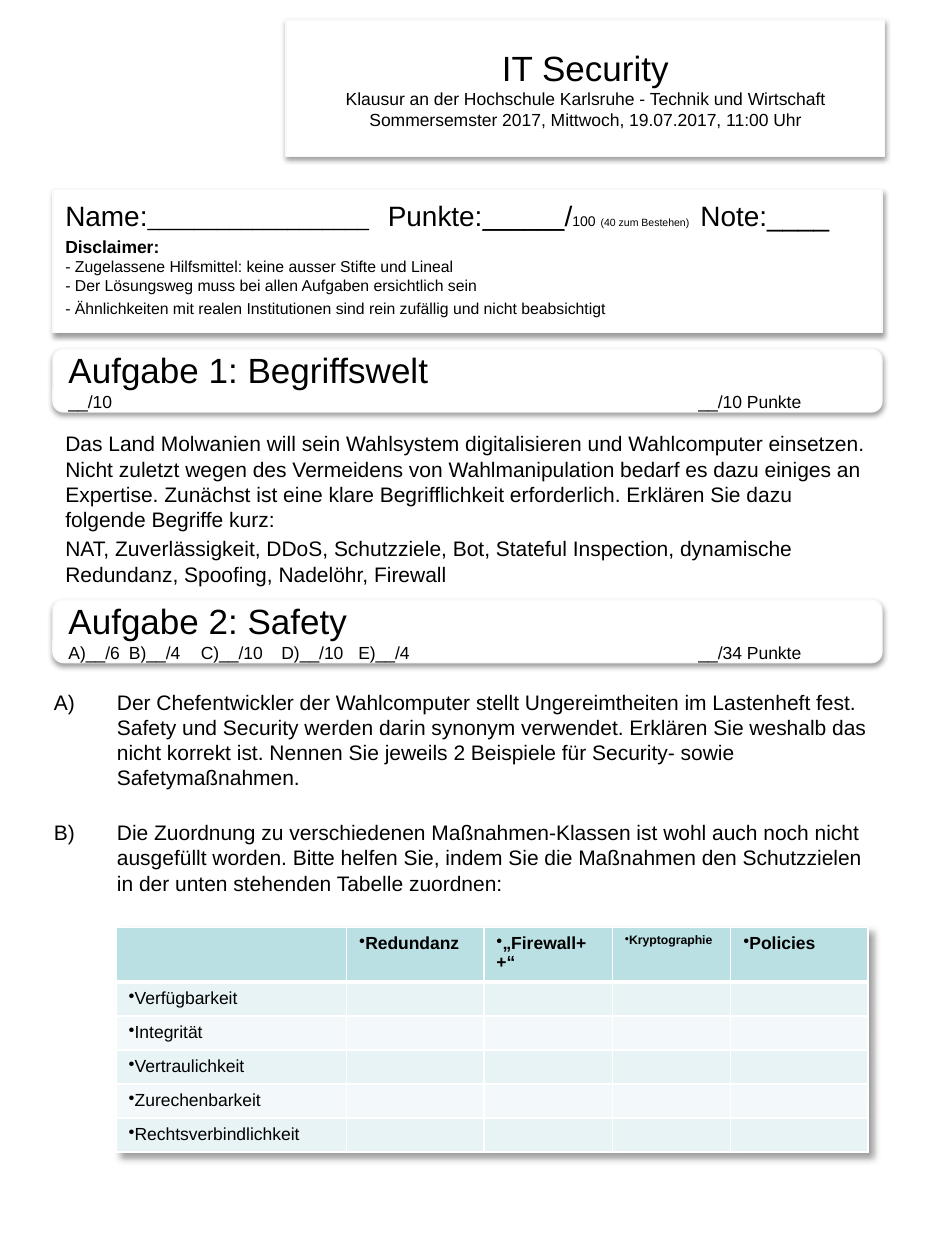
from lxml import etree
from pptx import Presentation
from pptx.dml.color import RGBColor
from pptx.enum.shapes import MSO_SHAPE
from pptx.enum.text import MSO_ANCHOR, PP_ALIGN
from pptx.oxml import parse_xml
from pptx.oxml.ns import nsdecls, qn
from pptx.util import Inches, Pt

BLACK = RGBColor(0x00, 0x00, 0x00)
WHITE = RGBColor(0xFF, 0xFF, 0xFF)
EDGE = RGBColor(0xF9, 0xF9, 0xF9)
HEAD = RGBColor(0xBB, 0xE0, 0xE3)
BAND = RGBColor(0xE7, 0xF3, 0xF4)
PALE = RGBColor(0xF3, 0xF9, 0xFA)
FONT = "Arial"


def shadow_xml(blur, dist, angle):
    return parse_xml(
        f'<a:effectLst {nsdecls("a")}><a:outerShdw blurRad="{Pt(blur)}" dist="{Pt(dist)}" '
        f'dir="{angle * 60000}" algn="tl" rotWithShape="0"><a:srgbClr val="{BLACK}">'
        '<a:alpha val="38000"/></a:srgbClr></a:outerShdw></a:effectLst>')


def add_run(p, text, size, bold=False, underline=False):
    r = p.add_run()
    r.text = text
    r.font.name = FONT
    r.font.size = Pt(size)
    r.font.bold = bold
    r.font.underline = underline
    r.font.color.rgb = BLACK


def add_lines(p, lines, size):
    for i, line in enumerate(lines):
        if i:
            p.add_line_break()
        add_run(p, line, size)


def add_tabs(p, stops):
    tabs = etree.SubElement(p._p.get_or_add_pPr(), qn("a:tabLst"))
    for stop in stops:
        etree.SubElement(tabs, qn("a:tab"), pos=str(Inches(stop)), algn="l")


def add_card(s, x, y, w, h, anchor, rounding):
    sp = s.shapes.add_shape(MSO_SHAPE.ROUNDED_RECTANGLE, Inches(x), Inches(y), Inches(w), Inches(h))
    sp.adjustments[0] = rounding
    sp.fill.solid()
    sp.fill.fore_color.rgb = WHITE
    sp.line.color.rgb = EDGE
    sp.line.width = Pt(0.75)
    sp.shadow.inherit = False
    effects = sp._element.spPr.find(qn("a:effectLst"))
    effects.getparent().replace(effects, shadow_xml(3.1, 1.6, 90))
    tf = sp.text_frame
    tf.word_wrap = True
    tf.vertical_anchor = anchor
    tf.paragraphs[0].alignment = PP_ALIGN.LEFT
    return tf


def add_title(s, x, y, w, h):
    p = add_card(s, x, y, w, h, MSO_ANCHOR.MIDDLE, 0).paragraphs[0]
    p.alignment = PP_ALIGN.CENTER
    add_run(p, "IT Security", 20)
    p.add_line_break()
    add_run(p, "Klausur an der Hochschule Karlsruhe - Technik und Wirtschaft "
               "Sommersemster 2017, Mittwoch, 19.07.2017, 11:00 Uhr", 10)


def add_form(s, x, y, w, h):
    tf = add_card(s, x, y, w, h, MSO_ANCHOR.TOP, 0)
    tf.margin_top = Inches(0.08)
    p = tf.paragraphs[0]
    add_tabs(p, [2.56, 5.04])
    add_run(p, "Name:", 16)
    add_run(p, "_" * 19 + "\t", 12)
    add_run(p, "Punkte:", 16)
    add_run(p, "______", 14, underline=True)
    add_run(p, "/", 16)
    add_run(p, "100", 8)
    add_run(p, " ", 10)
    add_run(p, "(40 zum Bestehen)\t", 6)
    add_run(p, "Note:____", 16)

    p = tf.add_paragraph()
    p.alignment = PP_ALIGN.LEFT
    p.space_before = Pt(2)
    add_run(p, "Disclaimer:", 10, bold=True)
    p.add_line_break()
    add_lines(p, ["- Zugelassene Hilfsmittel: keine ausser Stifte und Lineal",
                  "- Der Lösungsweg muss bei allen Aufgaben ersichtlich sein"], 9)

    p = tf.add_paragraph()
    p.alignment = PP_ALIGN.LEFT
    p.space_before = Pt(2)
    add_run(p, "- Ähnlichkeiten mit realen Institutionen sind rein zufällig und nicht beabsichtigt", 9)


def add_task_header(s, x, y, w, h, title, scores, stops):
    tf = add_card(s, x, y, w, h, MSO_ANCHOR.MIDDLE, 0.17)
    add_run(tf.paragraphs[0], title, 20)
    p = tf.add_paragraph()
    p.alignment = PP_ALIGN.LEFT
    add_tabs(p, stops)
    add_run(p, "\t".join(scores), 10)


def add_body(s, x, y, w, h, texts, gap, lettered=False):
    tf = s.shapes.add_textbox(Inches(x), Inches(y), Inches(w), Inches(h)).text_frame
    tf.word_wrap = True
    tf.margin_top = Inches(0.07)
    for i, text in enumerate(texts):
        p = tf.add_paragraph() if i else tf.paragraphs[0]
        if i:
            p.space_before = Pt(gap)
        if lettered:
            pPr = p._p.get_or_add_pPr()
            pPr.set("marL", str(Inches(0.5)))
            pPr.set("indent", str(Inches(-0.5)))
            etree.SubElement(pPr, qn("a:buFont"), typeface=FONT)
            etree.SubElement(pPr, qn("a:buAutoNum"), type="alphaUcParenR")
        add_run(p, text, 12)


def style_cell(cell, fill, bottom):
    tcPr = cell._tc.get_or_add_tcPr()
    for side, width in (("L", 1), ("R", 1), ("T", 1), ("B", bottom)):
        tcPr.append(parse_xml(
            f'<a:ln{side} {nsdecls("a")} w="{Pt(width)}"><a:solidFill>'
            f'<a:srgbClr val="{WHITE}"/></a:solidFill></a:ln{side}>'))
    cell.fill.solid()
    cell.fill.fore_color.rgb = fill


def add_matrix(s, x, y, widths, heads, goals):
    heights = [0.43] + [0.27] * len(goals)
    table = s.shapes.add_table(len(heights), len(widths), Inches(x), Inches(y),
                               Inches(sum(widths)), Inches(sum(heights))).table
    table.first_row = False
    table.horz_banding = False
    table._tbl.tblPr.insert(0, shadow_xml(4, 4, 45))
    for col, width in zip(table.columns, widths):
        col.width = Inches(width)
    blanks = [""] * (len(widths) - 1)
    rows = [[""] + heads] + [[goal] + blanks for goal in goals]
    for i, texts in enumerate(rows):
        table.rows[i].height = Inches(heights[i])
        fill = HEAD if i == 0 else BAND if i % 2 else PALE
        for j, text in enumerate(texts):
            cell = table.cell(i, j)
            style_cell(cell, fill, 1 if i else 3)
            p = cell.text_frame.paragraphs[0]
            if text:
                etree.SubElement(p._p.get_or_add_pPr(), qn("a:buChar"), char="•")
                add_run(p, text, 7 if text == "Kryptographie" else 10, bold=i == 0)
            else:
                etree.SubElement(p._p, qn("a:endParaRPr"), sz="1000")


def main():
    prs = Presentation()
    prs.slide_width = Inches(7.5)
    prs.slide_height = Inches(10)
    s = prs.slides.add_slide(prs.slide_layouts[6])
    add_title(s, 2.27, 0.16, 4.75, 1.08)
    add_form(s, 0.42, 1.5, 6.58, 1.14)
    add_task_header(s, 0.42, 2.77, 6.58, 0.5, "Aufgabe 1: Begriffswelt",
                    ["__/10", "__/10 Punkte"], [5])
    add_task_header(s, 0.42, 4.76, 6.58, 0.5, "Aufgabe 2: Safety",
                    ["A)__/6", "B)__/4", "C)__/10", "D)__/10", "E)__/4", "__/34 Punkte"],
                    [0.48, 1.05, 1.69, 2.3, 5])
    add_body(s, 0.42, 3.35, 6.58, 1.35, [
        "Das Land Molwanien will sein Wahlsystem digitalisieren und Wahlcomputer einsetzen. "
        "Nicht zuletzt wegen des Vermeidens von Wahlmanipulation bedarf es dazu einiges an "
        "Expertise. Zunächst ist eine klare Begrifflichkeit erforderlich. Erklären Sie dazu "
        "folgende Begriffe kurz:",
        "NAT, Zuverlässigkeit, DDoS, Schutzziele, Bot, Stateful Inspection, dynamische "
        "Redundanz, Spoofing, Nadelöhr, Firewall"], 2.4)
    add_body(s, 0.33, 5.4, 6.67, 1.76, [
        "Der Chefentwickler der Wahlcomputer stellt Ungereimtheiten im Lastenheft fest. "
        "Safety und Security werden darin synonym verwendet. Erklären Sie weshalb das nicht "
        "korrekt ist. Nennen Sie jeweils 2 Beispiele für Security- sowie Safetymaßnahmen.",
        "Die Zuordnung zu verschiedenen Maßnahmen-Klassen ist wohl auch noch nicht ausgefüllt "
        "worden. Bitte helfen Sie, indem Sie die Maßnahmen den Schutzzielen in der unten "
        "stehenden Tabelle zuordnen:"], 17, lettered=True)
    add_matrix(s, 0.92, 7.36, [1.83, 1.09, 1.02, 0.94, 1.09],
               ["Redundanz", "„Firewall++“", "Kryptographie", "Policies"],
               ["Verfügbarkeit", "Integrität", "Vertraulichkeit", "Zurechenbarkeit",
                "Rechtsverbindlichkeit"])
    prs.save("out.pptx")


if __name__ == "__main__":
    main()
